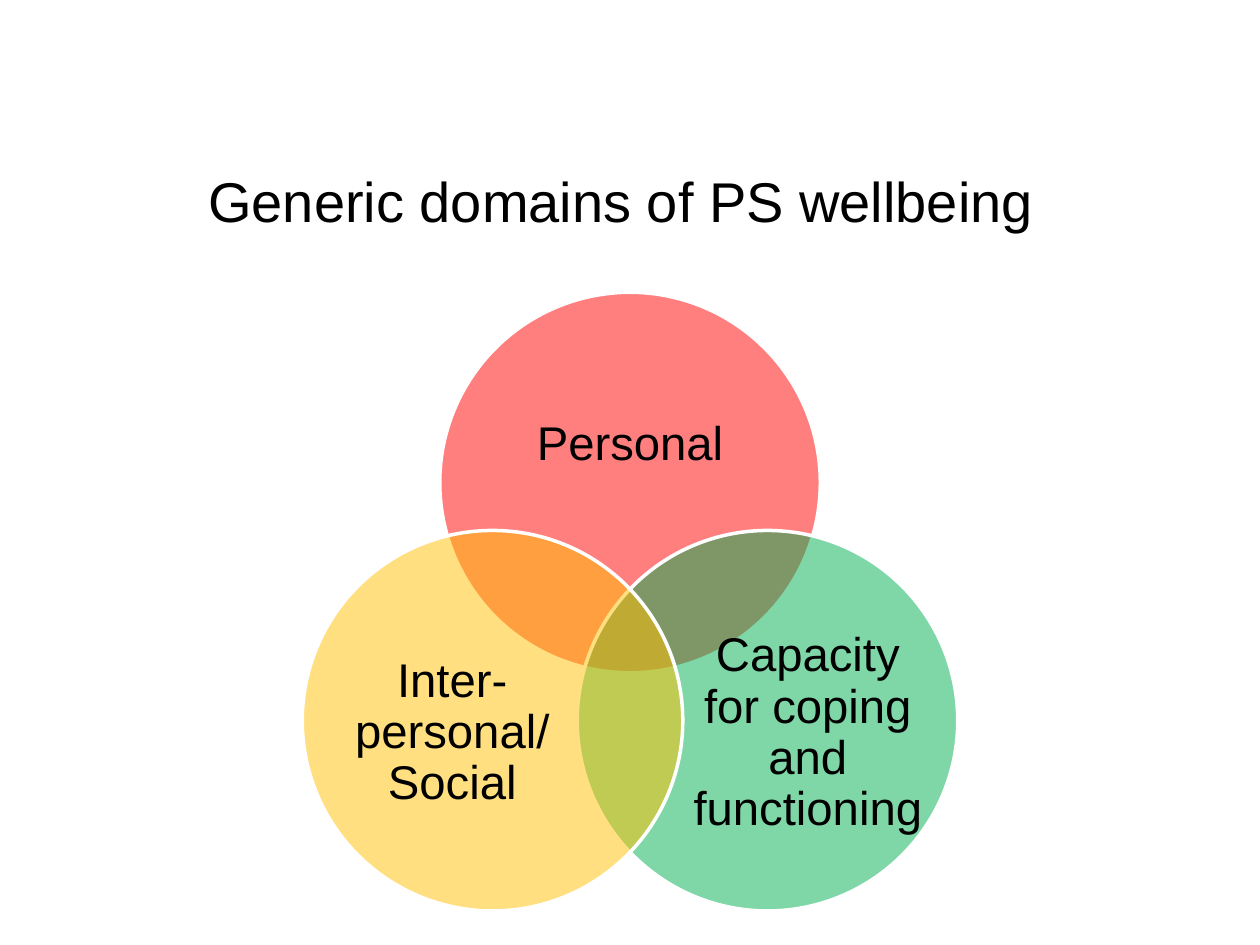
from dataclasses import dataclass
from math import cos, radians, sin

from lxml import etree
from pptx import Presentation
from pptx.dml.color import RGBColor
from pptx.enum.shapes import MSO_SHAPE
from pptx.enum.text import MSO_ANCHOR, PP_ALIGN
from pptx.oxml.ns import qn
from pptx.util import Inches, Pt

OVAL = MSO_SHAPE.OVAL
MIDDLE = MSO_ANCHOR.MIDDLE
CENTER = PP_ALIGN.CENTER
TITLE_ONLY = 5


@dataclass(frozen=True)
class Theme:
    font: str = "Arial"
    title_size: int = 32
    label_size: int = 27
    text: str = "000000"
    outline: str = "FFFFFF"
    personal: str = "FF0000"
    capacity: str = "00B050"
    social: str = "FFC000"
    opacity: int = 50


THEME = Theme()
WIDTH, HEIGHT = 10, 7.5
VENN_CENTER = (WIDTH / 2, 5.09)
VENN_RADIUS = 1.26
DIAMETER = 3.02

# text, colour, angle on the ring, label offset from the circle's centre, label size
DOMAINS = [
    ("Personal", THEME.personal, -90, (0, -0.3), (2.22, 1.36)),
    ("Capacity for coping and functioning", THEME.capacity, 30, (0.32, 0.1), (1.88, 1.66)),
    ("Inter-personal/ Social", THEME.social, 150, (-0.32, 0.1), (1.81, 1.66)),
]


def centered_box(x, y, w, h):
    """Return left, top, width and height of a box around a centre in inches."""
    return [Inches(v) for v in (x - w / 2, y - h / 2, w, h)]


def format_text(tf, text, size):
    tf.text = text
    tf.word_wrap = True
    tf.vertical_anchor = MIDDLE
    p = tf.paragraphs[0]
    p.alignment = CENTER
    p.font.name = THEME.font
    p.font.size = Pt(size)
    p.font.color.rgb = RGBColor.from_string(THEME.text)
    return p


def add_title(s, text):
    title = s.shapes.title
    title.left, title.top, title.width, title.height = [
        Inches(v) for v in (0.43, 1.15, 9, 0.87)]
    format_text(title.text_frame, text, THEME.title_size)


def add_circle(shapes, x, y, color):
    sp = shapes.add_shape(OVAL, *centered_box(x, y, DIAMETER, DIAMETER))
    sp.shadow.inherit = False
    sp.fill.solid()
    sp.fill.fore_color.rgb = RGBColor.from_string(color)
    rgb = sp.element.spPr.find(qn("a:solidFill")).find(qn("a:srgbClr"))
    etree.SubElement(rgb, qn("a:alpha")).set("val", str(THEME.opacity * 1000))
    sp.line.color.rgb = RGBColor.from_string(THEME.outline)
    sp.line.width = Pt(2)


def add_label(shapes, x, y, size, text):
    tf = shapes.add_textbox(*centered_box(x, y, *size)).text_frame
    tf.margin_left = tf.margin_right = tf.margin_top = tf.margin_bottom = 0
    p = format_text(tf, text, THEME.label_size)
    p.line_spacing = 0.9


def add_venn(s):
    shapes = s.shapes.add_group_shape().shapes
    for text, color, angle, (dx, dy), size in DOMAINS:
        x = VENN_CENTER[0] + VENN_RADIUS * cos(radians(angle))
        y = VENN_CENTER[1] + VENN_RADIUS * sin(radians(angle))
        add_circle(shapes, x, y, color)
        add_label(shapes, x + dx, y + dy, size, text)


def main():
    prs = Presentation()
    prs.slide_width, prs.slide_height = Inches(WIDTH), Inches(HEIGHT)
    s = prs.slides.add_slide(prs.slide_layouts[TITLE_ONLY])
    add_title(s, "Generic domains of PS wellbeing")
    add_venn(s)
    prs.save("out.pptx")


if __name__ == "__main__":
    main()
